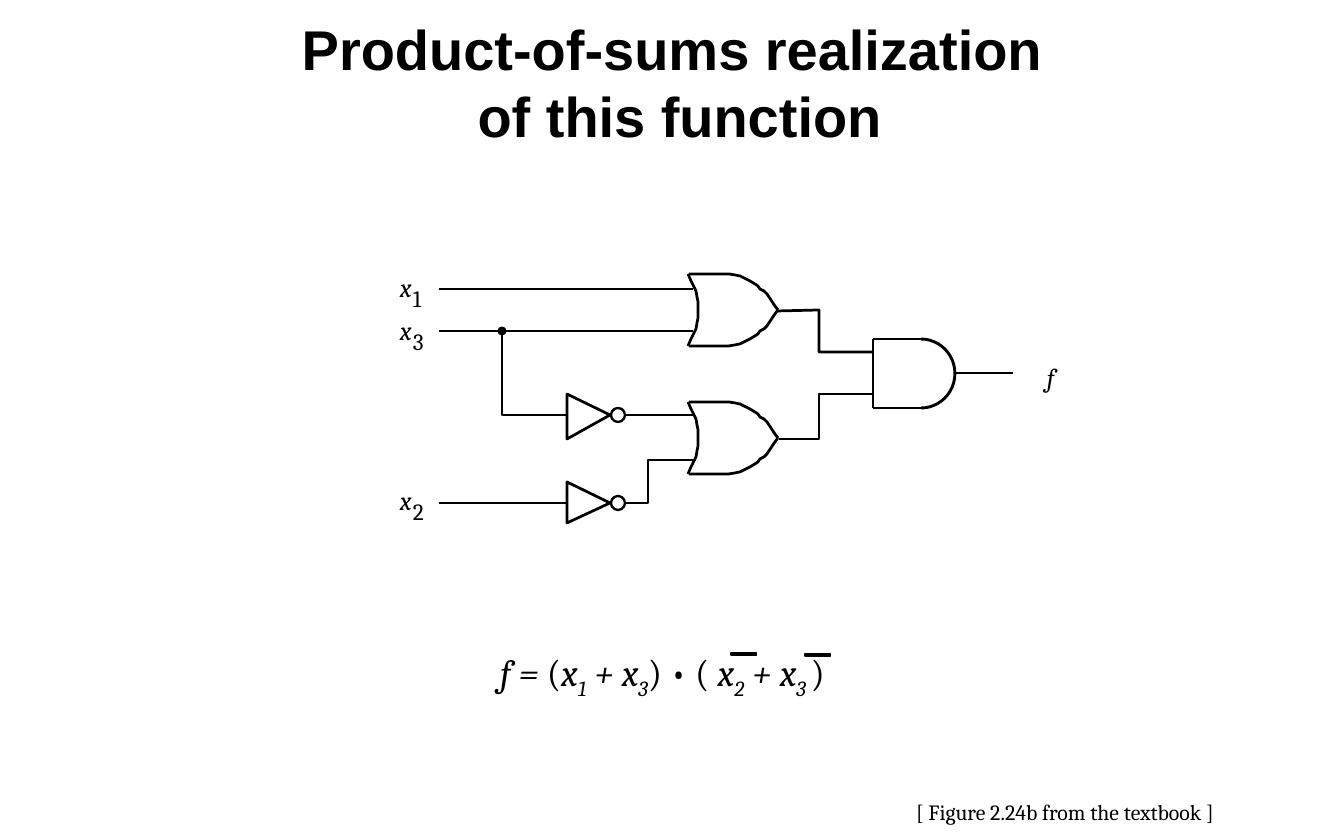
from pptx import Presentation
from pptx.dml.color import RGBColor
from pptx.enum.shapes import MSO_CONNECTOR, MSO_SHAPE
from pptx.enum.text import MSO_ANCHOR, MSO_AUTO_SIZE, PP_ALIGN
from pptx.util import Emu, Pt
from lxml.etree import SubElement
from pptx.oxml.ns import qn

PX = 914400 / 112
COLORS = {"ink": "000000", "paper": "FFFFFF"}
HEADING_FONT, BODY_FONT = "Arial", "Cambria"
WIRE, AND_WIRE, BUBBLE_WIRE, BAR_WIRE = 1.75, 1.88, 1.5, 0.75

TITLE = "Product-of-sums realization\v of this function"
CREDIT = "[ Figure 2.24b from the textbook ]"
INPUTS = [("1", 271), ("3", 314), ("2", 484)]
FORMULA = [
    ("f = ", True, 0), ("(", False, 0), ("x", True, 0), ("1", True, -25),
    (" + x", True, 0), ("3", True, -25), (") • ( ", False, 0), ("x", True, 0),
    ("2", True, -25), (" + x", True, 0), ("3 ", True, -25), (")", False, 0),
]
NEGATION_BARS = [(805, 654), (731, 653)]

STRAIGHT_WIRES = [
    (439, 289, 693, 289), (439, 331, 693, 331), (439, 503, 566, 503),
    (626, 415, 693, 415), (956, 373, 1013, 373),
]
BENT_WIRES = [
    [(502, 331), (502, 415), (567, 415)],
    [(626, 503), (648, 503), (648, 460), (693, 460)],
    [(778, 311), (819, 310), (819, 352), (873, 352)],
    [(779, 439), (819, 439), (819, 394), (873, 394)],
]
AND_SIDES = [(921, 339, 873, 339), (873, 339, 873, 408), (873, 408, 921, 408)]
AND_ARC = (887, 339, 68, 69)
JUNCTION = (499, 328, 6, 6)
INVERTERS = [(394, 415, 439), (482, 503, 523)]
OR_GATES = [(688, 310), (688, 438)]
OR_FRONT = [
    (1, 36), (41, 36), (47, 35), (52, 34), (58, 31), (62, 29), (67, 26), (70, 24),
    (72, 21), (76, 19), (79, 16), (83, 10), (87, 4), (90, 0),
]
OR_BACK = [(0, 36), (3, 29), (6, 23), (8, 19), (9, 13), (10, 8), (10, 4), (10, 0)]


def color(key):
    return RGBColor.from_string(COLORS[key])


def px(*lengths):
    return [Emu(round(length * PX)) for length in lengths]


def style(shape, width=WIRE, fill=None):
    shape.shadow.inherit = False
    if fill:
        shape.fill.solid()
        shape.fill.fore_color.rgb = color(fill)
    else:
        shape.fill.background()
    shape.line.color.rgb = color("ink")
    shape.line.width = Pt(width)


def add_wire(shapes, ends, width=WIRE):
    wire = shapes.add_connector(MSO_CONNECTOR.STRAIGHT, *px(*ends))
    wire.line.color.rgb = color("ink")
    wire.line.width = Pt(width)
    SubElement(wire.element.spPr, qn("a:effectLst"))


def add_outline(shapes, points, close=False, fill=None):
    builder = shapes.build_freeform(*points[0], scale=PX)
    builder.add_line_segments(points[1:], close=close)
    style(builder.convert_to_shape(), fill=fill)


def add_preset(shapes, preset, box, width=WIRE, fill=None):
    shape = shapes.add_shape(preset, *px(*box))
    style(shape, width, fill)
    return shape


def format_run(run, size, font=BODY_FONT, italic=False, bold=False):
    run.font.size = Pt(size)
    run.font.name = font
    run.font.italic = italic
    run.font.bold = bold
    run.font.color.rgb = color("ink")


def add_text(shapes, box, text, size=None, italic=False, inset=True):
    frame = shapes.add_textbox(*px(*box)).text_frame
    frame.word_wrap = False
    frame.auto_size = MSO_AUTO_SIZE.SHAPE_TO_FIT_TEXT
    if not inset:
        frame.margin_left = frame.margin_right = 0
        frame.margin_top = frame.margin_bottom = 0
    frame.text = text
    for run in frame.paragraphs[0].runs:
        format_run(run, size, italic=italic)
    return frame


def add_title(slide):
    title = slide.shapes.title
    title.left, title.top, title.width, title.height = px(112, 9, 1120, 146)
    frame = title.text_frame
    frame.text = TITLE
    frame.vertical_anchor = MSO_ANCHOR.MIDDLE
    frame.auto_size = MSO_AUTO_SIZE.NONE
    frame.paragraphs[0].alignment = PP_ALIGN.CENTER
    for run in frame.paragraphs[0].runs:
        format_run(run, 36, HEADING_FONT, bold=True)


def add_circuit(shapes):
    for ends in STRAIGHT_WIRES:
        add_wire(shapes, ends)
    for bends in BENT_WIRES:
        add_outline(shapes, bends)
    add_preset(shapes, MSO_SHAPE.OVAL, JUNCTION, fill="ink")

    for left, middle in OR_GATES:
        for curve in (OR_FRONT, OR_BACK):
            for side in (-1, 1):
                add_outline(shapes, [(left + x, middle + side * y) for x, y in curve])

    for top, middle, bottom in INVERTERS:
        triangle = [(610, middle), (567, bottom), (567, top)]
        add_outline(shapes, triangle, close=True, fill="paper")
        add_preset(shapes, MSO_SHAPE.OVAL, (611, middle - 7, 14, 14), BUBBLE_WIRE)

    for ends in AND_SIDES:
        add_wire(shapes, ends, AND_WIRE)
    arc = add_preset(shapes, MSO_SHAPE.ARC, AND_ARC, AND_WIRE)
    arc.adjustments[0], arc.adjustments[1] = 162, 54

    for subscript, top in INPUTS:
        add_text(shapes, (400, top, 13, 32), "x", 17, italic=True, inset=False)
        add_text(shapes, (413, top + 13, 11, 28), subscript, 15, inset=False)
    add_text(shapes, (1047, 361, 9, 32), "f", 17, italic=True, inset=False)


def add_formula(shapes):
    paragraph = add_text(shapes, (489, 644, 381, 57), "").paragraphs[0]
    for text, italic, baseline in FORMULA:
        run = paragraph.add_run()
        run.text = text
        format_run(run, 24, italic=italic)
        if baseline:
            run.font._element.set("baseline", str(baseline * 1000))
    for left, top in NEGATION_BARS:
        add_preset(shapes, MSO_SHAPE.RECTANGLE, (left, top, 26, 2), BAR_WIRE, "ink")


def main():
    deck = Presentation()
    deck.slide_width, deck.slide_height = px(1344, 840)
    slide = deck.slides.add_slide(deck.slide_layouts[5])
    add_title(slide)
    add_text(slide.shapes, (905, 793, 323, 38), CREDIT, 14)
    add_circuit(slide.shapes.add_group_shape().shapes)
    add_formula(slide.shapes.add_group_shape().shapes)
    deck.save("out.pptx")


if __name__ == "__main__":
    main()
